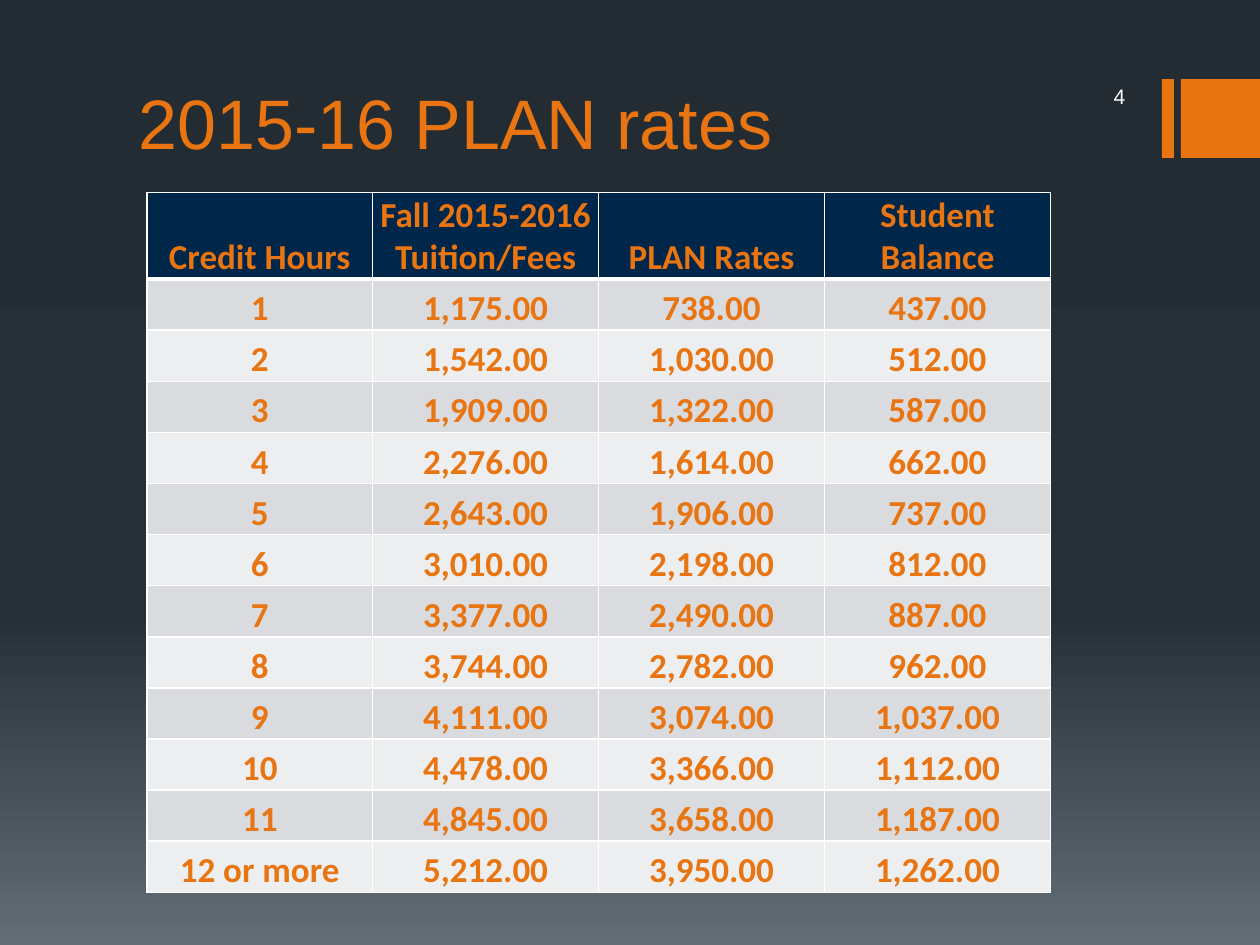
from copy import deepcopy
from dataclasses import dataclass

from lxml import etree
from pptx import Presentation
from pptx.dml.color import RGBColor
from pptx.enum.shapes import MSO_SHAPE
from pptx.enum.text import MSO_ANCHOR, MSO_AUTO_SIZE, PP_ALIGN
from pptx.oxml.ns import qn
from pptx.util import Pt

RECT = MSO_SHAPE.RECTANGLE
LEFT, CENTER, RIGHT = PP_ALIGN.LEFT, PP_ALIGN.CENTER, PP_ALIGN.RIGHT
MIDDLE, BOTTOM = MSO_ANCHOR.MIDDLE, MSO_ANCHOR.BOTTOM
NO_FIT = MSO_AUTO_SIZE.NONE


@dataclass(frozen=True)
class Theme:
    accent: str = "E87511"
    navy: str = "002649"
    bands: tuple = ("D9DBDE", "EDEEEF")
    white: str = "FFFFFF"
    back: tuple = ((0, "242C33"), (0.65, "273037"), (1, "636D76"))
    face: str = "Arial"
    cell_face: str = "Calibri"
    title: int = 40
    cell: int = 20
    small: int = 12


THEME = Theme()
HEADS = ("Credit Hours", "Fall 2015-2016 Tuition/Fees", "PLAN Rates", "Student Balance")
HOURS = 12
FEE, FEE_STEP = 1175, 367
RATE, RATE_STEP = 738, 292


def rgb(code):
    return RGBColor.from_string(code)


def box(left, top, width, height):
    return Pt(left), Pt(top), Pt(width), Pt(height)


def style(para, face, size, color, align, bold=False):
    para.alignment = align
    font = para.font
    font.name, font.size, font.bold = face, Pt(size), bold
    font.color.rgb = rgb(color)


def paint_back(slide):
    fill = slide.background.fill
    fill.gradient()
    fill.gradient_angle = 270
    stops = next(slide.element.iter(qn("a:gsLst")))
    stops.append(deepcopy(stops[-1]))
    for stop, (spot, color) in zip(fill.gradient_stops, THEME.back):
        stop.position = spot
        stop.color.rgb = rgb(color)


def add_bar(slide, left, width):
    bar = slide.shapes.add_shape(RECT, *box(left, 45.2, width, 45))
    bar.shadow.inherit = False
    bar.fill.solid()
    bar.fill.fore_color.rgb = rgb(THEME.accent)
    bar.line.fill.background()


def set_title(slide, text):
    title = slide.shapes.title
    title.left, title.top, title.width, title.height = box(72, 6.2, 576, 90.7)
    frame = title.text_frame
    frame.text = text
    frame.auto_size = NO_FIT
    frame.vertical_anchor = BOTTOM
    style(frame.paragraphs[0], THEME.face, THEME.title, THEME.accent, LEFT)


def add_number(slide, text):
    frame = slide.shapes.add_textbox(*box(576, 43, 74, 24)).text_frame
    frame.word_wrap = True
    frame.vertical_anchor = MIDDLE
    frame.text = text
    style(frame.paragraphs[0], THEME.face, THEME.small, THEME.white, RIGHT)


def add_edge(cell, side, width):
    props = cell._tc.get_or_add_tcPr()
    line = etree.SubElement(props, qn(f"a:ln{side}"), w=str(Pt(width)))
    fill = etree.SubElement(line, qn("a:solidFill"))
    etree.SubElement(fill, qn("a:srgbClr"), val=THEME.white)


def fill_cell(cell, text, color, top, bottom):
    """Write one cell; top and bottom are the border widths there."""
    for side, width in (("L", 1), ("R", 1), ("T", top), ("B", bottom)):
        add_edge(cell, side, width)
    cell.fill.solid()
    cell.fill.fore_color.rgb = rgb(color)
    cell.margin_left = cell.margin_right = cell.margin_top = Pt(0.7)
    cell.margin_bottom = Pt(0)
    cell.vertical_anchor = BOTTOM
    cell.text = text
    style(cell.text_frame.paragraphs[0], THEME.cell_face, THEME.cell,
          THEME.accent, CENTER, True)


def rate_rows():
    """Each credit hour adds a fixed step to the fee and to the rate."""
    for step in range(HOURS):
        hours = str(step + 1) if step + 1 < HOURS else f"{HOURS} or more"
        fee, rate = FEE + step * FEE_STEP, RATE + step * RATE_STEP
        yield hours, *(f"{value:,.2f}" for value in (fee, rate, fee - rate))


def add_rates(slide):
    rows = [HEADS, *rate_rows()]
    frame = slide.shapes.add_table(len(rows), len(HEADS), *box(83.9, 110, 516.4, 399.9))
    table = frame.table
    for col in table.columns:
        col.width = Pt(129.1)
    for i, texts in enumerate(rows):
        table.rows[i].height = Pt(29.2 if i else 49.5)
        color = THEME.bands[(i - 1) % 2] if i else THEME.navy
        top, bottom = 3 if i == 1 else 1, 1 if i else 3
        for j, text in enumerate(texts):
            fill_cell(table.cell(i, j), text, color, top, bottom)


def main():
    deck = Presentation()
    deck.slide_width, deck.slide_height = Pt(720), Pt(540)
    slide = deck.slides.add_slide(deck.slide_layouts[5])
    paint_back(slide)
    add_bar(slide, 664, 6.8)
    add_bar(slide, 674.8, 45.2)
    set_title(slide, "2015-16 PLAN rates")
    add_number(slide, "4")
    add_rates(slide)
    deck.save("out.pptx")


if __name__ == "__main__":
    main()
